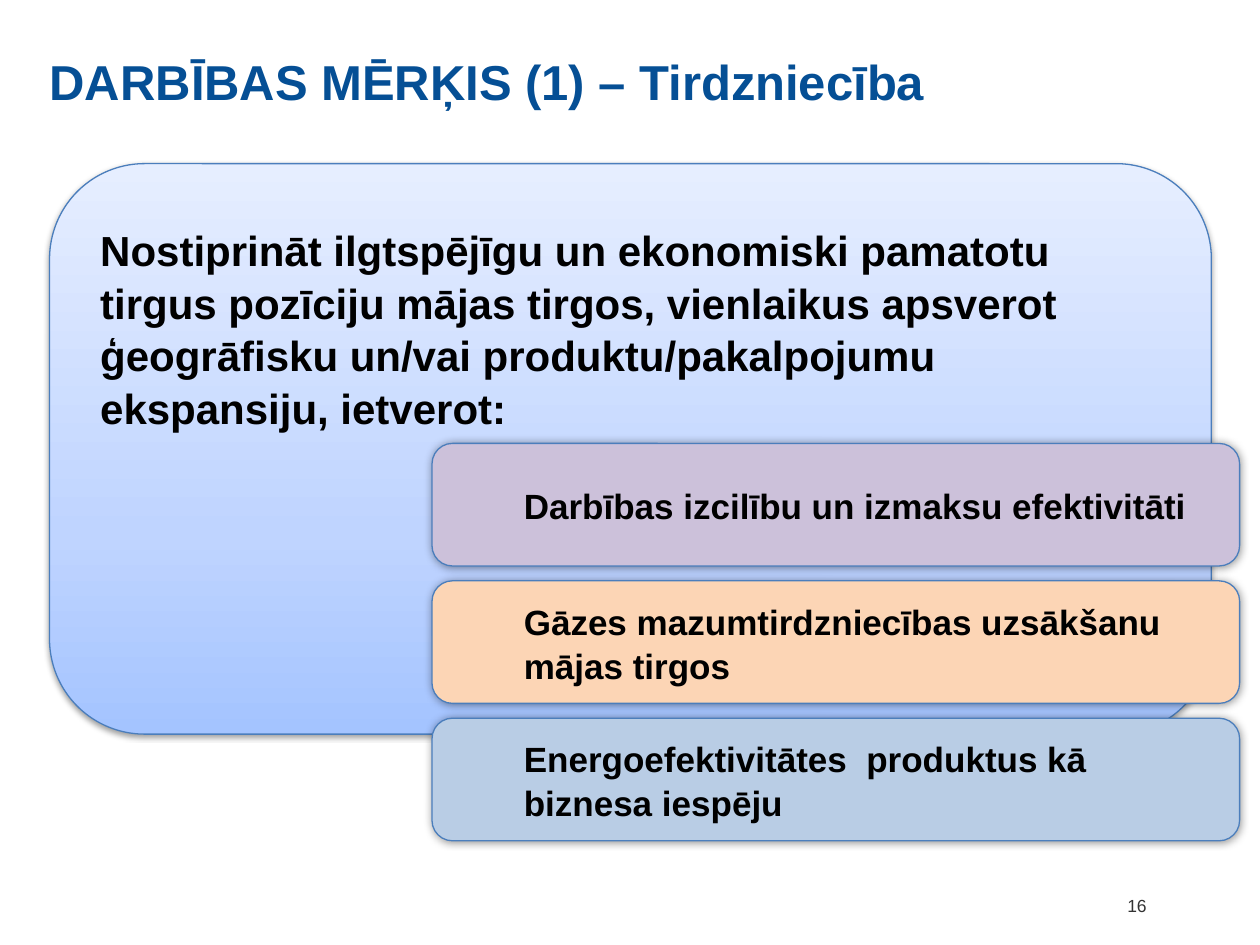
import copy

import lxml.etree
import pptx
import pptx.dml.color
import pptx.enum.shapes
import pptx.enum.text
import pptx.oxml.ns
import pptx.util

Cm = pptx.util.Cm
Pt = pptx.util.Pt
RGB = pptx.dml.color.RGBColor
ALIGN = pptx.enum.text.PP_ALIGN
ANCHOR = pptx.enum.text.MSO_ANCHOR
qn = pptx.oxml.ns.qn

BLUE = RGB(0x05, 0x4F, 0x95)
BLACK = RGB(0x00, 0x00, 0x00)
GREY = RGB(0x33, 0x33, 0x33)
OUTLINE = RGB(0x4B, 0x7E, 0xBC)
LILAC = RGB(0xCC, 0xC1, 0xDA)
PEACH = RGB(0xFC, 0xD5, 0xB5)
PALE_BLUE = RGB(0xB9, 0xCD, 0xE5)
GRADIENT = [
    (0, RGB(0xA4, 0xC4, 0xFF)),
    (0.35, RGB(0xBF, 0xD4, 0xFF)),
    (1, RGB(0xE6, 0xEE, 0xFF)),
]


def set_text(sp, text, size, color, bold=True, align=ALIGN.LEFT,
             anchor=ANCHOR.MIDDLE, insets=(0, 0, 0, 0), spacing=1.05):
    tf = sp.text_frame
    frame = {"word_wrap": True, "auto_size": pptx.enum.text.MSO_AUTO_SIZE.NONE,
             "vertical_anchor": anchor}
    sides = ("margin_left", "margin_top", "margin_right", "margin_bottom")
    frame.update(zip(sides, map(Cm, insets)))
    for name, value in frame.items():
        setattr(tf, name, value)
    p = tf.paragraphs[0]
    p.alignment = align
    p.line_spacing = spacing
    p.space_before = Pt(0)
    r = p.add_run()
    r.text = text
    font = {"name": "Arial", "size": Pt(size), "bold": bold}
    for name, value in font.items():
        setattr(r.font, name, value)
    r.font.color.rgb = color
    return p


def add_panel(sl, left, top, width, height, alpha, blur, dist):
    sp = sl.shapes.add_shape(pptx.enum.shapes.MSO_SHAPE.ROUNDED_RECTANGLE,
                             Cm(left), Cm(top), Cm(width), Cm(height))
    sp.line.color.rgb = OUTLINE
    sp.line.width = Pt(0.75)
    sp.shadow.inherit = False
    effects = sp._element.spPr.find(qn("a:effectLst"))
    shadow = lxml.etree.SubElement(
        effects, qn("a:outerShdw"), blurRad=str(Pt(blur)), dist=str(Pt(dist)),
        dir="5400000", rotWithShape="0")
    color = lxml.etree.SubElement(shadow, qn("a:srgbClr"), val=str(BLACK))
    lxml.etree.SubElement(color, qn("a:alpha"), val=str(alpha * 1000))
    return sp


prs = pptx.Presentation()
prs.slide_width = Cm(25.4)
prs.slide_height = Cm(19.05)
s = prs.slides.add_slide(prs.slide_layouts[5])

title = s.shapes.title
place = {"left": Cm(1), "top": Cm(0.97), "width": Cm(23.42), "height": Cm(3)}
for name, value in place.items():
    setattr(title, name, value)
set_text(title, "DARBĪBAS MĒRĶIS (1) – Tirdzniecība", 28, BLUE, anchor=ANCHOR.TOP)

number = s.shapes.add_textbox(Cm(21.42), Cm(18), Cm(3), Cm(0.5))
set_text(number, "16", 10, GREY, bold=False, align=ALIGN.CENTER, spacing=1)

goal = add_panel(s, 1, 3.3, 23.42, 11.5, 38, 3.1, 1.6)
goal.fill.gradient()
goal.fill.gradient_angle = 90
stops = goal._element.spPr.find(".//" + qn("a:gsLst"))
stops.append(copy.deepcopy(stops[-1]))
for stop, (position, color) in zip(goal.fill.gradient_stops, GRADIENT):
    stop.position = position
    stop.color.rgb = color
set_text(
    goal,
    "Nostiprināt ilgtspējīgu un ekonomiski pamatotu tirgus pozīciju mājas tirgos, "
    "vienlaikus apsverot ģeogrāfisku un/vai produktu/pakalpojumu ekspansiju, ietverot:",
    24, BLACK, anchor=ANCHOR.TOP, insets=(0.46, 0.61, 0.46, 0.13))

items = [
    ("Darbības izcilību un izmaksu efektivitāti", LILAC),
    ("Gāzes mazumtirdzniecības uzsākšanu mājas tirgos", PEACH),
    ("Energoefektivitātes  produktus kā biznesa iespēju", PALE_BLUE),
]
for i, (text, color) in enumerate(items):
    sp = add_panel(s, 8.71, 8.94 + i * 2.77, 16.28, 2.47, 40, 5, 0)
    sp.fill.solid()
    sp.fill.fore_color.rgb = color
    p = set_text(sp, text, 20, BLACK, insets=(0.46, 0, 0.46, 0))
    p.level = 1
    pPr = p._p.get_or_add_pPr()
    pPr.set("marL", str(Cm(1.27)))
    pPr.set("indent", "0")

prs.save("out.pptx")
